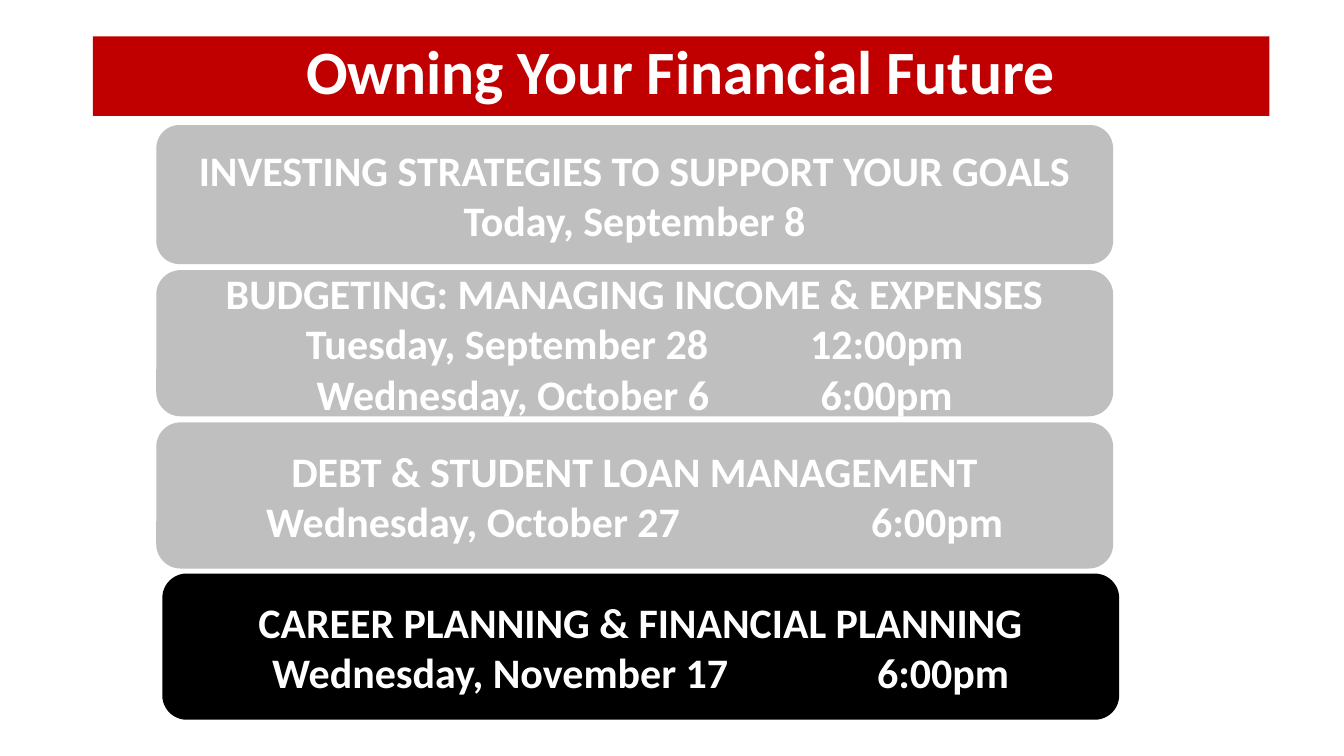
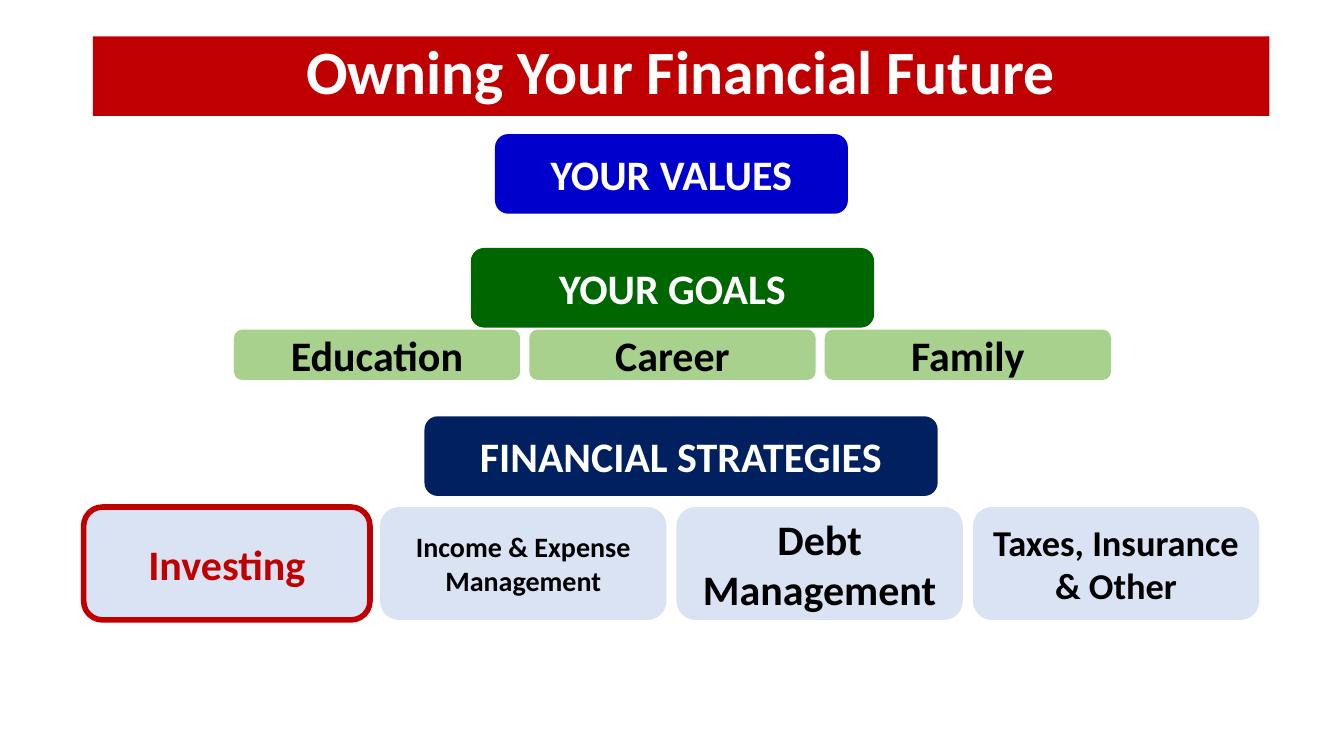
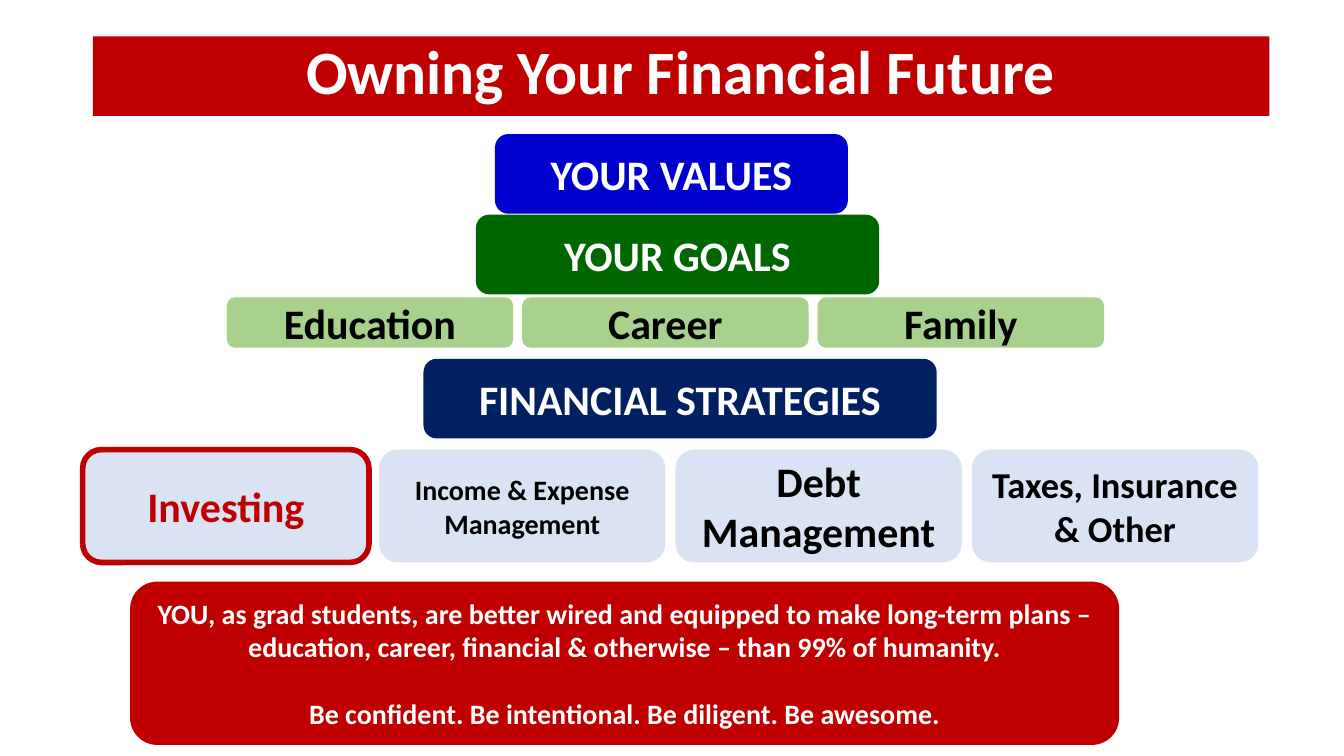
"""Build three slides on owning your financial future."""
from lxml import etree
from pptx import Presentation
from pptx.dml.color import RGBColor
from pptx.enum.shapes import MSO_SHAPE
from pptx.enum.text import MSO_ANCHOR, MSO_AUTO_SIZE, PP_ALIGN
from pptx.oxml.ns import qn
from pptx.util import Pt

PX = 9144
TAB_STEP = 100
ROUNDED = MSO_SHAPE.ROUNDED_RECTANGLE
CENTER = PP_ALIGN.CENTER
TOP = MSO_ANCHOR.TOP
MIDDLE = MSO_ANCHOR.MIDDLE
NO_AUTOFIT = MSO_AUTO_SIZE.NONE
TITLE_ONLY = 5

WHITE = RGBColor(0xFF, 0xFF, 0xFF)
BLACK = RGBColor(0x00, 0x00, 0x00)
RED = RGBColor(0xC0, 0x00, 0x00)
GRAY = RGBColor(0xBF, 0xBF, 0xBF)
BLUE = RGBColor(0x00, 0x00, 0xCC)
GREEN = RGBColor(0x00, 0x66, 0x00)
LIGHT_GREEN = RGBColor(0xA9, 0xD1, 0x8E)
NAVY = RGBColor(0x00, 0x20, 0x60)
LIGHT_BLUE = RGBColor(0xDA, 0xE3, 0xF3)

TITLE = "Owning Your Financial Future"
SESSIONS = [
    (155, 124, 138, GRAY, ["INVESTING STRATEGIES TO SUPPORT YOUR GOALS",
                           "Today, September 8"]),
    (155, 268, 145, GRAY, ["BUDGETING: MANAGING INCOME & EXPENSES",
                           "Tuesday, September 28\t \t12:00pm",
                           "Wednesday, October 6\t\t6:00pm"]),
    (155, 419, 145, GRAY, ["DEBT & STUDENT LOAN MANAGEMENT",
                           "Wednesday, October 27\t\t6:00pm"]),
    (161, 569, 145, BLACK, ["CAREER PLANNING & FINANCIAL PLANNING",
                            "Wednesday, November 17\t\t6:00pm"]),
]
GOALS = ["Education", "Career", "Family"]
STRATEGIES = [
    ("Investing", 30, RED, RED),
    ("Income & Expense Management", 20, BLACK, None),
    ("Debt Management", 30, BLACK, None),
    ("Taxes, Insurance & Other", 26, BLACK, None),
]
MESSAGE = [
    "YOU, as grad students, are better wired and equipped to make long-term plans – "
    "education, career, financial & otherwise – than 99% of humanity.",
    "Be confident. Be intentional. Be diligent. Be awesome.",
]


class Deck:
    """Hold the presentation, its shared style and the current slide."""

    def __init__(self):
        """Start an empty wide presentation."""
        self.presentation = Presentation()
        self.presentation.slide_width = 1333 * PX
        self.presentation.slide_height = 750 * PX
        self.slide = None

    def place(self, shape, left, top, width, height):
        """Move and size a shape in px."""
        values = {"left": left, "top": top, "width": width, "height": height}
        for name, value in values.items():
            setattr(shape, name, value * PX)

    def add_tabs(self, paragraph):
        """Give a paragraph evenly spaced tab stops."""
        tab_list = etree.SubElement(paragraph._p.get_or_add_pPr(), qn("a:tabLst"))
        for number in range(1, 9):
            position = str(number * TAB_STEP * PX)
            etree.SubElement(tab_list, qn("a:tab"), pos=position, algn="l")

    def add_text(self, shape, lines, size, color, anchor=MIDDLE, gap=0):
        """Put bold centred lines into a shape."""
        frame = shape.text_frame
        frame_format = {"word_wrap": True, "auto_size": NO_AUTOFIT,
                        "vertical_anchor": anchor}
        for name, value in frame_format.items():
            setattr(frame, name, value)
        for index, line in enumerate(lines):
            paragraph = frame.add_paragraph() if index else frame.paragraphs[0]
            paragraph.alignment = CENTER
            if "\t" in line:
                self.add_tabs(paragraph)
            if index and gap:
                paragraph.space_before = Pt(gap)
            run = paragraph.add_run()
            run.text = line
            font_format = {"name": "Calibri", "size": Pt(size), "bold": True}
            for name, value in font_format.items():
                setattr(run.font, name, value)
            run.font.color.rgb = color

    def add_slide(self):
        """Add a slide with the red title band."""
        layout = self.presentation.slide_layouts[TITLE_ONLY]
        self.slide = self.presentation.slides.add_slide(layout)
        title = self.slide.shapes.title
        self.place(title, 92, 36, 1167, 79)
        title.fill.solid()
        title.fill.fore_color.rgb = RED
        self.add_text(title, [TITLE], 44, WHITE, TOP)
        title.text_frame.paragraphs[0].line_spacing = 0.9

    def add_box(self, box, lines, fill, size=30, color=WHITE, outline=None, gap=0):
        """Add a filled rounded box with text."""
        shape = self.slide.shapes.add_shape(ROUNDED, *(value * PX for value in box))
        shape.shadow.inherit = False
        shape.fill.solid()
        shape.fill.fore_color.rgb = fill
        if outline:
            shape.line.color.rgb = outline
            shape.line.width = Pt(4)
        else:
            shape.line.fill.background()
        self.add_text(shape, lines, size, color, gap=gap)

    def add_goals(self, left, top):
        """Add the row of goals."""
        for index, goal in enumerate(GOALS):
            self.add_box((left + index * 293, top, 284, 50), [goal],
                         LIGHT_GREEN, color=BLACK)

    def add_strategies(self, left, top):
        """Add the row of financial strategies."""
        for index, (label, size, color, outline) in enumerate(STRATEGIES):
            self.add_box((left + index * 294, top, 284, 112), [label],
                         LIGHT_BLUE, size, color, outline)

    def add_pyramid(self, goals_head, goals, strategies_head, strategies):
        """Add a slide leading from values to goals to strategies."""
        self.add_slide()
        self.add_box((491, 133, 350, 79), ["YOUR VALUES"], BLUE)
        self.add_box((*goals_head, 400, 79), ["YOUR GOALS"], GREEN)
        self.add_goals(*goals)
        self.add_box((*strategies_head, 509, 79), ["FINANCIAL STRATEGIES"], NAVY)
        self.add_strategies(*strategies)


def main():
    """Build and save the slides."""
    deck = Deck()
    deck.add_slide()
    for left, top, height, fill, lines in SESSIONS:
        deck.add_box((left, top, 949, height), lines, fill)
    deck.add_pyramid((467, 246), (232, 327), (421, 413), (83, 503))
    deck.add_pyramid((472, 213), (225, 295), (420, 356), (82, 446))
    deck.add_box((129, 577, 981, 162), MESSAGE, RED, 20, gap=24)
    deck.presentation.save("out.pptx")


if __name__ == "__main__":
    main()
